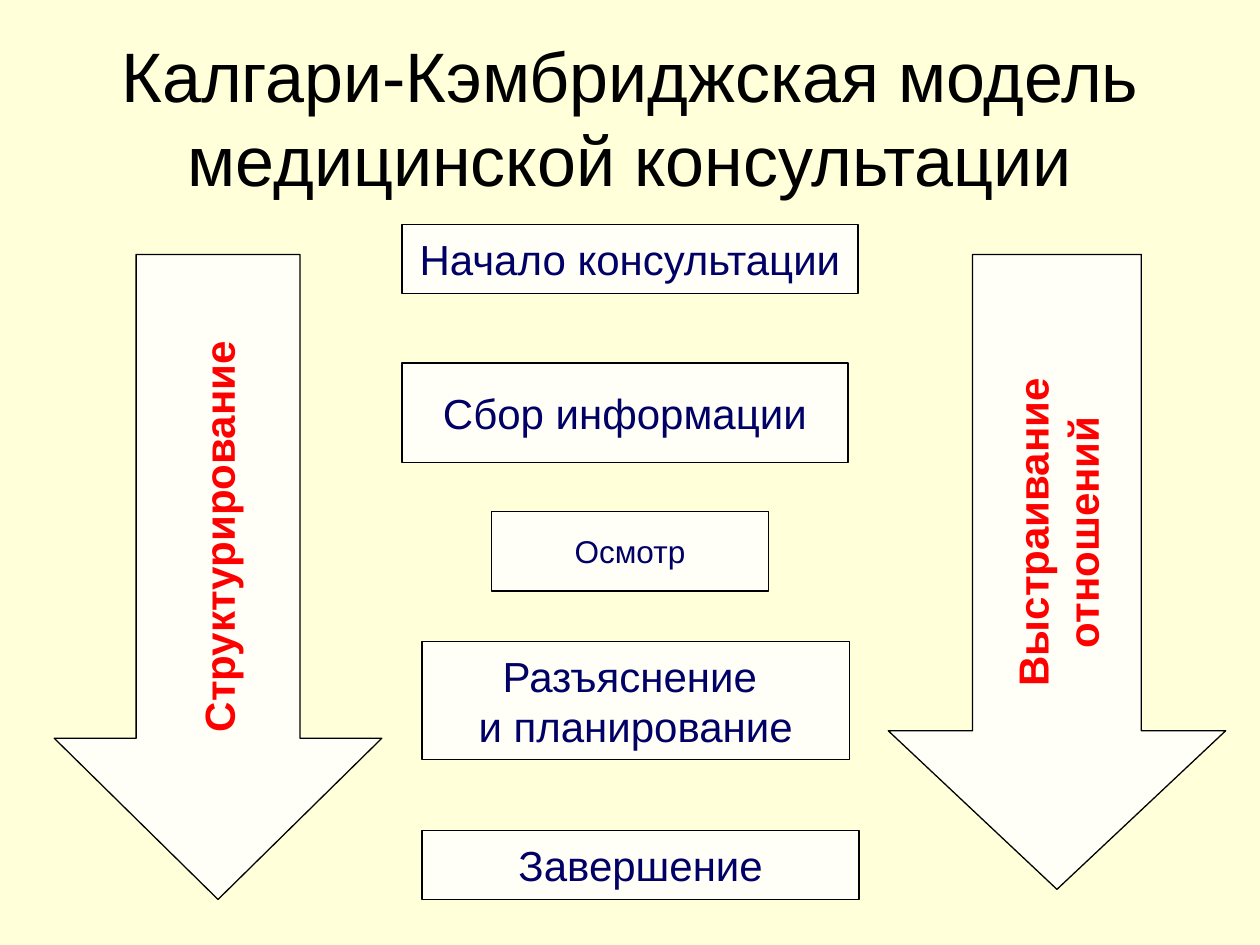
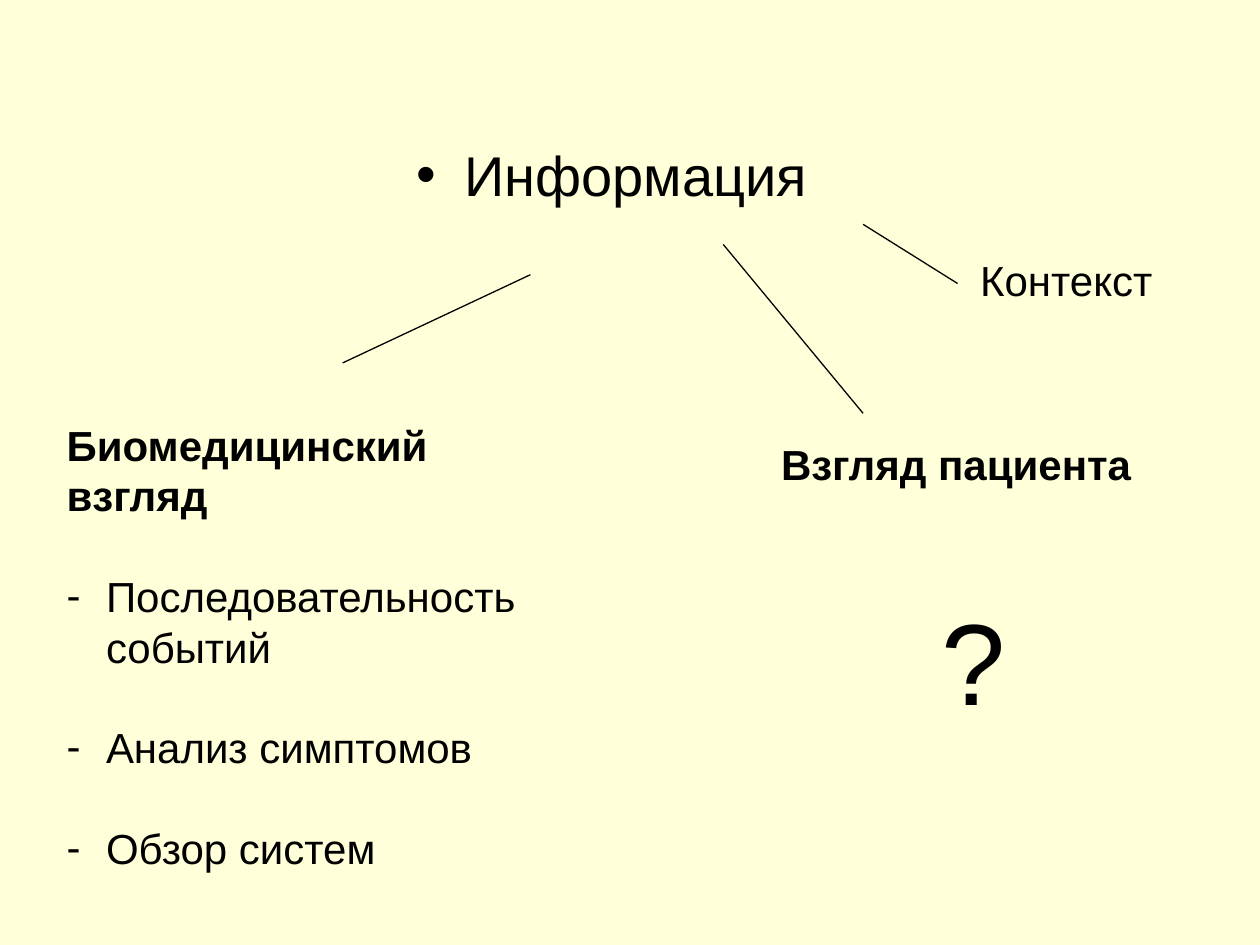
import pptx
import pptx.dml.color
import pptx.enum.shapes
import pptx.enum.text
import pptx.oxml.ns
import pptx.util
from lxml import etree

Pt = pptx.util.Pt
SHAPE = pptx.enum.shapes.MSO_SHAPE
ALIGN = pptx.enum.text.PP_ALIGN
ANCHOR = pptx.enum.text.MSO_ANCHOR

FONT = "Arial"
CREAM, IVORY, BLACK, NAVY, RED = "FFFFD9", "FFFFF7", "000000", "000066", "FF0000"
LINE_WIDTH = 0.75
LINE_GAP = 28.8  # height of one 24 pt line

# Places are left, top, width, height in points.
TITLE = "Калгари-Кэмбриджская модель медицинской консультации"
TITLE_PLACE = (36, 21.6, 648, 90)

PROCESSES = [  # lines, place, depth of the arrow head
    (["Структурирование"], (31, 145.4, 187.2, 368.6), 0.492),
    (["Выстраивание", "отношений"], (507.6, 145.4, 192.8, 362.8), 0.47),
]
STAGES = [  # lines, place, text size
    (["Начало консультации"], (229.7, 128.2, 260.6, 39.6), 24),
    (["Сбор информации"], (229.7, 207.4, 254.9, 56.9), 24),
    (["Осмотр"], (280.8, 292.3, 158.4, 45.4), 18),
    (["Разъяснение ", "и планирование"], (241.2, 366.5, 244.1, 67.7), 24),
    (["Завершение"], (241.2, 474.5, 249.8, 39.6), 24),
]

TOPIC = "Информация "
TOPIC_PLACE = (31, 31.7, 646.6, 158.4)
TOPIC_TOP_INSET = 48.5
BIOMEDICAL_ITEMS = ["Последовательность событий", "Анализ симптомов", "Обзор систем"]
BRANCHES = [  # place, paragraphs
    ((31, 236.2, 277.9, 269.3),
     [dict(text="Биомедицинский взгляд", bold=True)]
     + [dict(text=item, bullet="-", indent=22.5, before=LINE_GAP)
        for item in BIOMEDICAL_ITEMS]),
    ((439.2, 247, 260.6, 174.2),
     [dict(text="Взгляд пациента", bold=True),
      dict(text="?", size=66, indent=91.5, before=2 * LINE_GAP)]),
    ((553, 141.8, 130.3, 58.3), [dict(text="Контекст")]),
]
BRANCH_LINES = [  # start, end
    ((303.1, 157), (195.8, 207.4)),
    ((413.3, 139.7), (493.2, 236.2)),
    ((493.2, 128.2), (547.2, 162)),
]


def color(hex_code):
    return pptx.dml.color.RGBColor.from_string(hex_code)


def points(values):
    return [Pt(value) for value in values]


def move(placeholder, place):
    placeholder.left, placeholder.top, placeholder.width, placeholder.height = points(place)


def add_paragraph(frame, text, size=24, bold=False, ink=BLACK, align=ALIGN.LEFT,
                  bullet=None, indent=0, before=0):
    """Fill the empty first paragraph of the frame, or append another one."""
    first = frame.paragraphs[0]
    paragraph = frame.add_paragraph() if first.runs else first
    paragraph.alignment = align
    paragraph.space_before = Pt(before)
    properties = paragraph._p.get_or_add_pPr()
    properties.set("marL", str(Pt(indent)))
    properties.set("indent", str(-Pt(indent) if bullet else 0))
    if bullet:
        for tag, attribute, value in (("a:buFont", "typeface", FONT),
                                      ("a:buChar", "char", bullet)):
            mark = etree.SubElement(properties, pptx.oxml.ns.qn(tag))
            mark.set(attribute, value)
    run = paragraph.add_run()
    run.text = text
    run.font.name = FONT
    run.font.size = Pt(size)
    run.font.bold = bold
    run.font.color.rgb = color(ink)


def outline(line):
    line.color.rgb = color(BLACK)
    line.width = Pt(LINE_WIDTH)


def add_block(slide, preset, place, lines, **text_style):
    """Add an outlined shape with centred lines."""
    block = slide.shapes.add_shape(preset, *points(place))
    block.shadow.inherit = False
    block.fill.solid()
    block.fill.fore_color.rgb = color(IVORY)
    outline(block.line)
    frame = block.text_frame
    frame.word_wrap = False
    frame.vertical_anchor = ANCHOR.MIDDLE
    for line in lines:
        add_paragraph(frame, line, align=ALIGN.CENTER, **text_style)
    return block


def add_process_arrow(slide, place, lines, head_depth):
    """Add a down arrow whose label reads upwards, inside the shaft."""
    arrow = add_block(slide, SHAPE.DOWN_ARROW, place, lines, bold=True, ink=RED)
    arrow.adjustments[0] = 0.5
    arrow.adjustments[1] = head_depth
    arrow.text_frame.word_wrap = True
    arrow.text_frame._txBody.bodyPr.set("vert", "vert270")


def add_branch_line(slide, start, end):
    branch = slide.shapes.add_connector(
        pptx.enum.shapes.MSO_CONNECTOR.STRAIGHT, *points(start + end))
    outline(branch.line)
    etree.SubElement(branch._element.spPr, pptx.oxml.ns.qn("a:effectLst"))


def build_model_slide(deck):
    slide = deck.slides.add_slide(deck.slide_layouts.get_by_name("Title Only"))
    title = slide.shapes.title
    move(title, TITLE_PLACE)
    title.text_frame.auto_size = pptx.enum.text.MSO_AUTO_SIZE.NONE
    title.text_frame.vertical_anchor = ANCHOR.MIDDLE
    add_paragraph(title.text_frame, TITLE, size=40, align=ALIGN.CENTER)
    for lines, place, head_depth in PROCESSES:
        add_process_arrow(slide, place, lines, head_depth)
    for lines, place, size in STAGES:
        add_block(slide, SHAPE.RECTANGLE, place, lines, size=size, ink=NAVY)


def build_information_slide(deck):
    slide = deck.slides.add_slide(deck.slide_layouts.get_by_name("Title and Content"))
    unused_title = slide.shapes.title._element
    unused_title.getparent().remove(unused_title)
    topic = slide.placeholders[1]
    move(topic, TOPIC_PLACE)
    topic.text_frame.auto_size = pptx.enum.text.MSO_AUTO_SIZE.NONE
    topic.text_frame.margin_top = Pt(TOPIC_TOP_INSET)
    add_paragraph(topic.text_frame, TOPIC, size=32, align=ALIGN.CENTER,
                  bullet="•", indent=27)
    for place, paragraphs in BRANCHES:
        frame = slide.shapes.add_textbox(*points(place)).text_frame
        frame.word_wrap = True
        for paragraph in paragraphs:
            add_paragraph(frame, **paragraph)
    for start, end in BRANCH_LINES:
        add_branch_line(slide, start, end)


def main():
    deck = pptx.Presentation()
    deck.slide_width, deck.slide_height = Pt(720), Pt(540)
    background = deck.slide_master.background.fill
    background.solid()
    background.fore_color.rgb = color(CREAM)
    build_model_slide(deck)
    build_information_slide(deck)
    deck.save("out.pptx")


if __name__ == "__main__":
    main()
